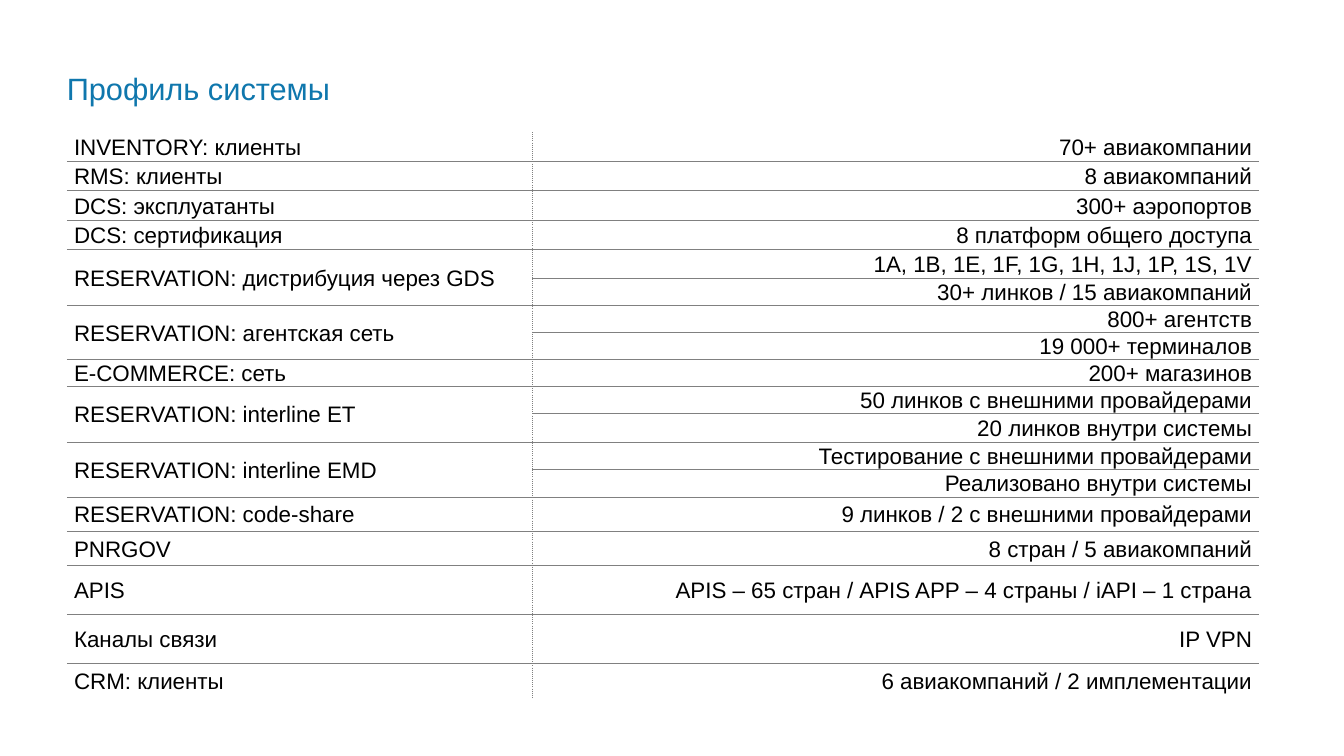
from lxml.etree import SubElement
from pptx import Presentation
from pptx.dml.color import RGBColor
from pptx.enum.text import MSO_ANCHOR as Anchor, MSO_AUTO_SIZE as AutoSize, PP_ALIGN as Align
from pptx.oxml.ns import qn
from pptx.util import Pt

COLORS = {"title": "0F77AD", "text": "000000", "rule": "808080"}
FONT = "Arial"
COLUMN_WIDTHS = (332.6, 519.2)

# Label, then one (value, row height) pair for each row the label covers
PROFILE = [
    ("INVENTORY: клиенты", [("70+ авиакомпании", 21)]),
    ("RMS: клиенты", [("8 авиакомпаний", 21)]),
    ("DCS: эксплуатанты", [("300+ аэропортов", 21)]),
    ("DCS: сертификация", [("8 платформ общего доступа", 21)]),
    ("RESERVATION: дистрибуция через GDS",
     [("1A, 1B, 1E, 1F, 1G, 1Н, 1J, 1P, 1S, 1V", 20.8), ("30+ линков / 15 авиакомпаний", 19.3)]),
    ("RESERVATION: агентская сеть", [("800+ агентств", 19.3), ("19 000+ терминалов", 19.3)]),
    ("E-COMMERCE: сеть", [("200+ магазинов", 18.6)]),
    ("RESERVATION: interline ET",
     [("50 линков с внешними провайдерами", 19.3), ("20 линков внутри системы", 20.7)]),
    ("RESERVATION: interline EMD",
     [("Тестирование с внешними провайдерами", 19.3), ("Реализовано внутри системы", 20)]),
    ("RESERVATION: code-share", [("9 линков / 2 с внешними провайдерами", 24.3)]),
    ("PNRGOV", [("8 стран / 5 авиакомпаний", 24.8)]),
    ("APIS", [("APIS – 65 стран / APIS APP – 4 страны / iAPI – 1 страна", 35)]),
    ("Каналы связи", [("IP VPN", 35)]),
    ("CRM: клиенты", [("6 авиакомпаний / 2 имплементации", 24.6)]),
]


def style_run(run, size, color):
    run.font.name = FONT
    run.font.size = Pt(size)
    run.font.color.rgb = RGBColor.from_string(COLORS[color])


def set_borders(cell, **dashes):
    """Draw the named sides in their dash style and clear the others."""
    properties = cell._tc.get_or_add_tcPr()
    for side in "LRTB":
        line = SubElement(properties, qn(f"a:ln{side}"), w=str(Pt(0.5)))
        if side in dashes:
            fill = SubElement(line, qn("a:solidFill"))
            SubElement(fill, qn("a:srgbClr"), val=COLORS["rule"])
            SubElement(line, qn("a:prstDash"), val=dashes[side])
        else:
            SubElement(line, qn("a:noFill"))


def format_cell(cell, alignment):
    cell.vertical_anchor = Anchor.MIDDLE
    cell.margin_left = cell.margin_right = Pt(5.2)
    cell.margin_top = cell.margin_bottom = 0
    paragraph = cell.text_frame.paragraphs[0]
    paragraph.alignment = alignment
    paragraph.line_spacing = 1.07
    paragraph.space_after = Pt(8)
    paragraph.font.size = Pt(16)
    for run in paragraph.runs:
        style_run(run, 16, "text")


def add_title(slide, left, top, width, height):
    title = slide.shapes.title
    title.left, title.top, title.width, title.height = map(Pt, (left, top, width, height))
    frame = title.text_frame
    frame.text = "Профиль системы"
    frame.word_wrap = True
    frame.auto_size = AutoSize.NONE
    frame.vertical_anchor = Anchor.TOP
    frame.margin_left = frame.margin_right = frame.margin_top = frame.margin_bottom = 0
    paragraph = frame.paragraphs[0]
    paragraph.alignment = Align.LEFT
    style_run(paragraph.runs[0], 22, "title")


def add_profile_table(slide, left, top):
    heights = [height for _, values in PROFILE for _, height in values]
    table = slide.shapes.add_table(len(heights), 2, Pt(left), Pt(top),
                                   Pt(sum(COLUMN_WIDTHS)), Pt(sum(heights))).table
    table.first_row = table.horz_banding = False
    for column, width in zip(table.columns, COLUMN_WIDTHS):
        column.width = Pt(width)
    for row, height in zip(table.rows, heights):
        row.height = Pt(height)

    # Texts, with each label merged over its values
    first = 0
    label_starts = set()
    for label, values in PROFILE:
        label_starts.add(first)
        table.cell(first, 0).text_frame.text = label
        for offset, (value, _) in enumerate(values):
            table.cell(first + offset, 1).text_frame.text = value
        if len(values) > 1:
            table.cell(first, 0).merge(table.cell(first + len(values) - 1, 0))
        first += len(values)

    # Solid rules between rows, a dotted one between columns
    last = len(heights) - 1
    for index in range(len(heights)):
        for column, (alignment, inner_side) in enumerate(((Align.LEFT, "R"), (Align.RIGHT, "L"))):
            cell = table.cell(index, column)
            format_cell(cell, alignment)
            dashes = {inner_side: "sysDot"}
            if index > 0 and (column == 1 or index in label_starts):
                dashes["T"] = "solid"
            if index < last:
                dashes["B"] = "solid"
            set_borders(cell, **dashes)
            cell.fill.background()


def main():
    presentation = Presentation()
    presentation.slide_width, presentation.slide_height = Pt(960), Pt(540)
    slide = presentation.slides.add_slide(presentation.slide_layouts[5])
    add_title(slide, 47.7, 49.7, 861.8, 75.6)
    add_profile_table(slide, 47.7, 94.3)
    presentation.save("out.pptx")


if __name__ == "__main__":
    main()
